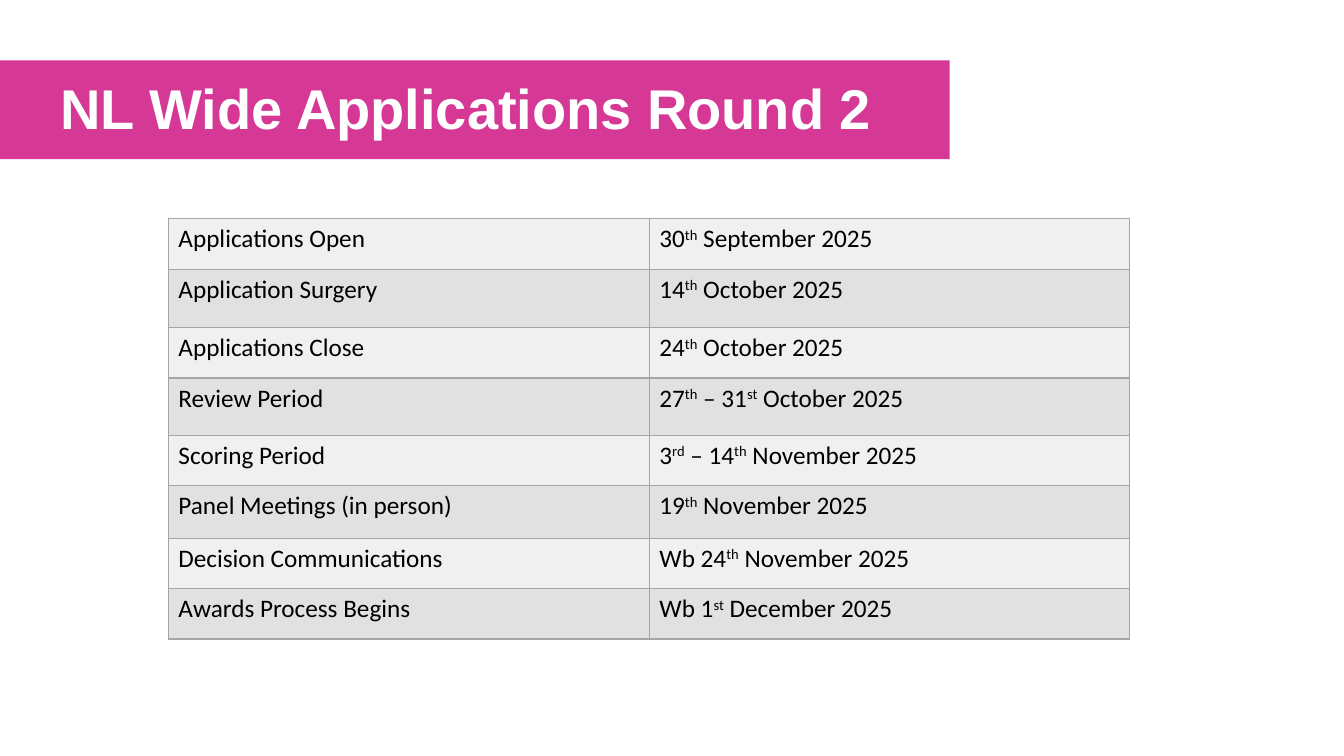
from lxml.etree import SubElement
from pptx import Presentation
from pptx.dml.color import RGBColor
from pptx.enum.shapes import MSO_SHAPE
from pptx.enum.text import MSO_ANCHOR, MSO_AUTO_SIZE, PP_ALIGN
from pptx.oxml.ns import qn
from pptx.util import Inches, Pt

COLOURS = {
    "band": "D53995",
    "title": "FFFFFF",
    "text": "000000",
    "border": "A5A5A5",
    "light row": "F0F0F0",
    "dark row": "E1E1E1",
}
COLUMN_WIDTHS = [4.77, 4.76]
SCHEDULE = [
    ("Applications Open", "30^th^ September 2025", 0.5),
    ("Application Surgery", "14^th^ October 2025", 0.58),
    ("Applications Close", "24^th^ October 2025", 0.5),
    ("Review Period", "27^th^ – 31^st^ October 2025", 0.57),
    ("Scoring Period", "3^rd^ – 14^th^ November 2025", 0.5),
    ("Panel Meetings (in person)", "19^th^ November 2025", 0.52),
    ("Decision Communications", "Wb 24^th^ November 2025", 0.5),
    ("Awards Process Begins", "Wb 1^st^ December 2025", 0.5),
]


def colour(name):
    """Return the named colour."""
    return RGBColor.from_string(COLOURS[name])


def style_font(font, family, size, colour_name, bold=False):
    """Set the family, size, colour and weight of a font."""
    font.name = family
    font.size = Pt(size)
    font.bold = bold
    font.color.rgb = colour(colour_name)


def add_title_band(page, text, left, top, width, height):
    """Place the coloured band with the title on it."""
    title = page.shapes.title
    band = page.shapes.add_shape(
        MSO_SHAPE.RECTANGLE, Inches(left), Inches(top), Inches(width), Inches(height)
    )
    band.shadow.inherit = False
    band.fill.solid()
    band.fill.fore_color.rgb = colour("band")
    band.line.fill.background()
    title.element.addprevious(band.element)

    title.left, title.top = Inches(left + 0.52), Inches(top + 0.16)
    title.width, title.height = Inches(width - 0.71), Inches(height - 0.29)
    frame = title.text_frame
    frame.text = text
    frame.word_wrap = True
    frame.auto_size = MSO_AUTO_SIZE.NONE
    frame.vertical_anchor = MSO_ANCHOR.MIDDLE
    para = frame.paragraphs[0]
    para.alignment = PP_ALIGN.LEFT
    para.line_spacing = 0.9
    style_font(para.font, "Arial", 40, "title", bold=True)


def add_borders(cell):
    """Draw a thin line on all four sides of a cell."""
    properties = cell._tc.get_or_add_tcPr()
    for side in ("a:lnL", "a:lnR", "a:lnT", "a:lnB"):
        line = SubElement(properties, qn(side), w=str(Pt(1)))
        fill = SubElement(line, qn("a:solidFill"))
        SubElement(fill, qn("a:srgbClr"), val=COLOURS["border"])


def fill_cell(cell, text, fill_name):
    """Style a cell and write its text, raising the parts between carets."""
    add_borders(cell)
    cell.fill.solid()
    cell.fill.fore_color.rgb = colour(fill_name)
    para = cell.text_frame.paragraphs[0]
    style_font(para.font, "Calibri", 18, "text")
    for index, part in enumerate(text.split("^")):
        span = para.add_run()
        span.text = part
        if index % 2:
            span.font._element.set("baseline", "30000")


def add_schedule(page, left, top, width, height):
    """Place the table of stages and dates."""
    table = page.shapes.add_table(
        len(SCHEDULE), len(COLUMN_WIDTHS),
        Inches(left), Inches(top), Inches(width), Inches(height),
    ).table
    table.first_row = False
    table.horz_banding = False
    for column, column_width in zip(table.columns, COLUMN_WIDTHS):
        column.width = Inches(column_width)
    for index, (stage, date, row_height) in enumerate(SCHEDULE):
        table.rows[index].height = Inches(row_height)
        fill_name = "dark row" if index % 2 else "light row"
        for cell, text in zip(table.rows[index].cells, (stage, date)):
            fill_cell(cell, text, fill_name)


def main():
    """Build the slide and save the deck."""
    deck = Presentation()
    deck.slide_width, deck.slide_height = Inches(13.33), Inches(7.5)
    page = deck.slides.add_slide(deck.slide_layouts[5])
    add_title_band(page, "NL Wide Applications Round 2", -0.02, 0.6, 9.44, 0.98)
    add_schedule(page, 1.67, 2.17, 9.53, 4.18)
    deck.save("out.pptx")


if __name__ == "__main__":
    main()
